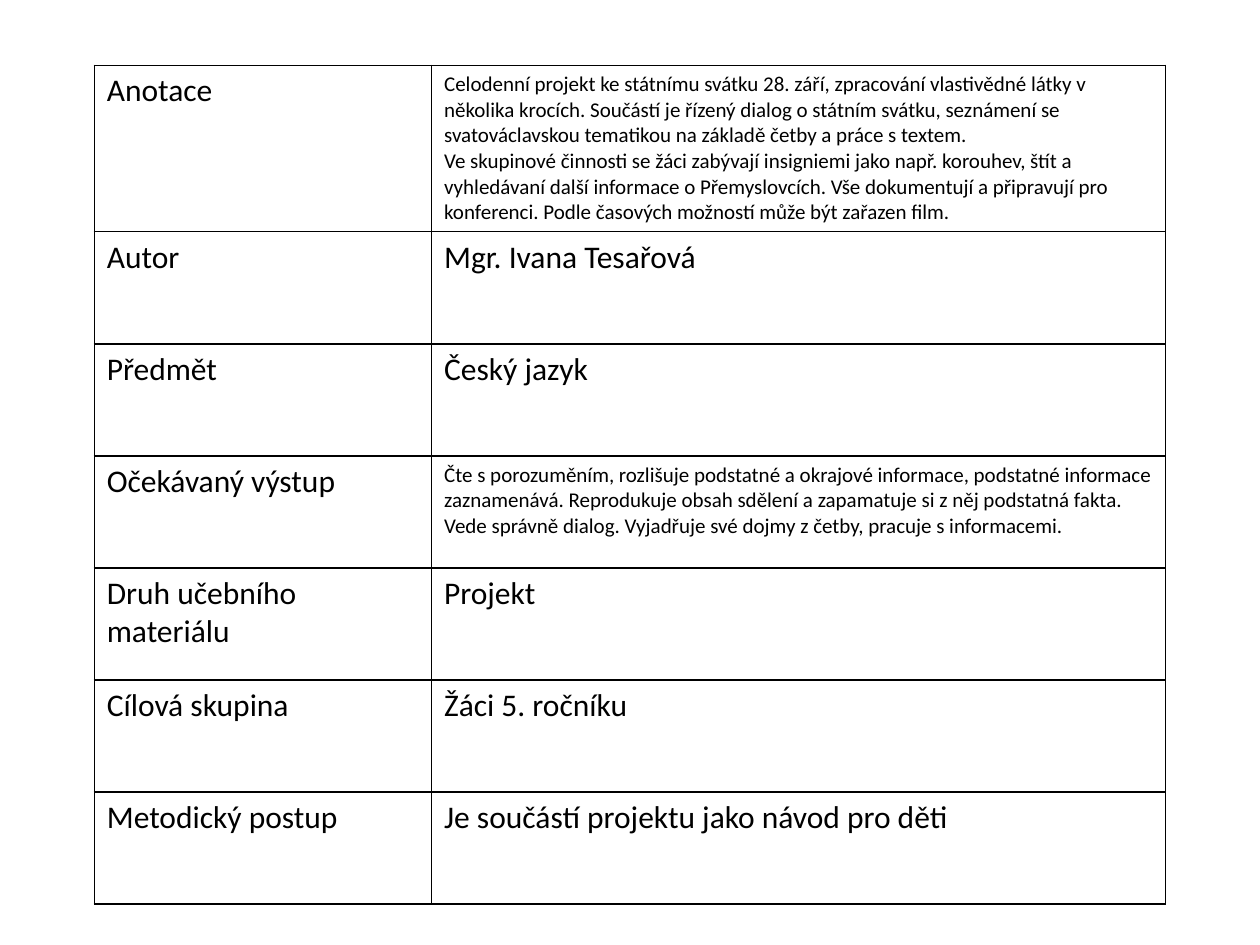
from dataclasses import dataclass

from lxml import etree
from pptx import Presentation
from pptx.dml.color import RGBColor
from pptx.oxml.ns import qn
from pptx.util import Cm, Pt


@dataclass(frozen=True)
class Theme:
    font: str = "Calibri"
    ink: str = "000000"
    paper: str = "FFFFFF"
    body: int = 18
    small: int = 12
    border: int = 1


@dataclass(frozen=True)
class Box:
    left: float
    top: float
    width: float
    height: float


THEME = Theme()
LABEL_WIDTH = 6.8
ROW_HEIGHT = 2.26

# Label, value, size of the value
ENTRIES = [
    ("Anotace",
     "Celodenní projekt ke státnímu svátku 28. září, zpracování vlastivědné "
     "látky v několika krocích. Součástí je řízený dialog o státním svátku, "
     "seznámení se svatováclavskou tematikou na základě četby a práce s textem.\n"
     "Ve skupinové činnosti se žáci zabývají insigniemi jako např. korouhev, "
     "štít a vyhledávaní další informace o Přemyslovcích. Vše dokumentují a "
     "připravují pro konferenci. Podle časových možností může být zařazen film.",
     THEME.small),
    ("Autor", "Mgr. Ivana Tesařová", THEME.body),
    ("Předmět", "Český jazyk", THEME.body),
    ("Očekávaný výstup",
     "Čte s porozuměním, rozlišuje podstatné a okrajové informace, podstatné "
     "informace zaznamenává. Reprodukuje obsah sdělení a zapamatuje si z něj "
     "podstatná fakta. Vede správně dialog. Vyjadřuje své dojmy z četby, "
     "pracuje s informacemi.",
     THEME.small),
    ("Druh učebního materiálu", "Projekt", THEME.body),
    ("Cílová skupina", "Žáci 5. ročníku", THEME.body),
    ("Metodický postup", "Je součástí projektu jako návod pro děti", THEME.body),
]


def add_borders(cell):
    """Draw all four sides; the schema wants them ahead of the cell's fill."""
    properties = cell._tc.get_or_add_tcPr()
    for index, side in enumerate(("a:lnL", "a:lnR", "a:lnT", "a:lnB")):
        line = etree.Element(qn(side), w=str(Pt(THEME.border)))
        fill = etree.SubElement(line, qn("a:solidFill"))
        etree.SubElement(fill, qn("a:srgbClr"), val=THEME.ink)
        properties.insert(index, line)


def fill_cell(cell, words, size):
    cell.fill.solid()
    cell.fill.fore_color.rgb = RGBColor.from_string(THEME.paper)
    add_borders(cell)
    cell.text = words
    for para in cell.text_frame.paragraphs:
        para.font.name = THEME.font
        para.font.size = Pt(size)
        para.font.bold = False
        para.font.color.rgb = RGBColor.from_string(THEME.ink)


def add_details_table(page, box):
    frame = page.shapes.add_table(
        len(ENTRIES), 2, Cm(box.left), Cm(box.top), Cm(box.width), Cm(box.height))
    table = frame.table
    table.first_row = table.horz_banding = False
    table.columns[0].width = Cm(LABEL_WIDTH)
    table.columns[1].width = Cm(box.width - LABEL_WIDTH)
    for row, (label, value, size) in zip(table.rows, ENTRIES):
        row.height = Cm(ROW_HEIGHT)
        fill_cell(row.cells[0], label, THEME.body)
        fill_cell(row.cells[1], value, size)
    # The first row grows with its text, so the frame is taller than the rows' sum
    frame.height = Cm(box.height)


def main():
    deck = Presentation()
    deck.slide_width, deck.slide_height = Cm(25.4), Cm(19.05)
    page = deck.slides.add_slide(deck.slide_layouts[6])
    add_details_table(page, Box(1.9, 1.32, 21.6, 16.84))
    deck.save("out.pptx")


if __name__ == "__main__":
    main()
